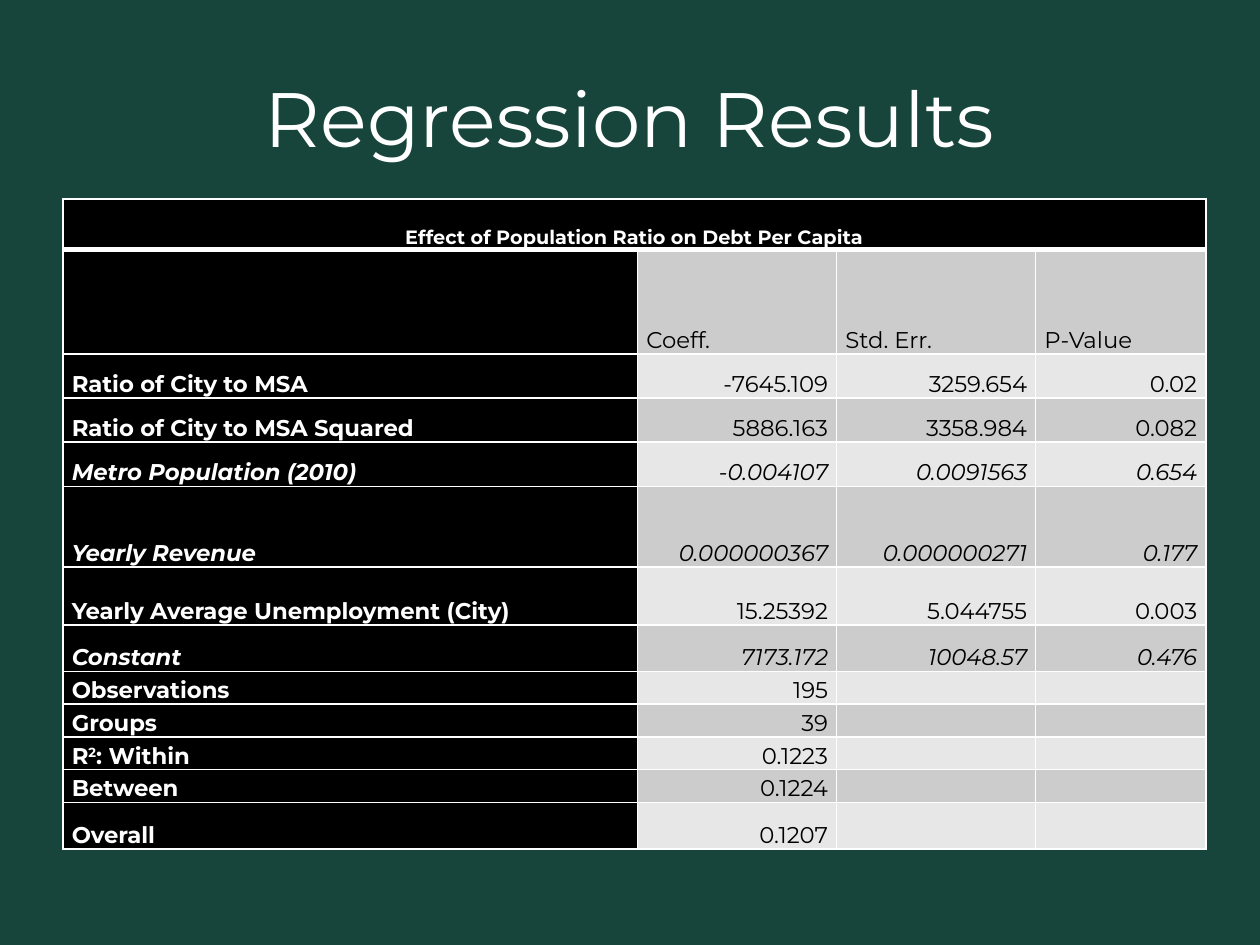
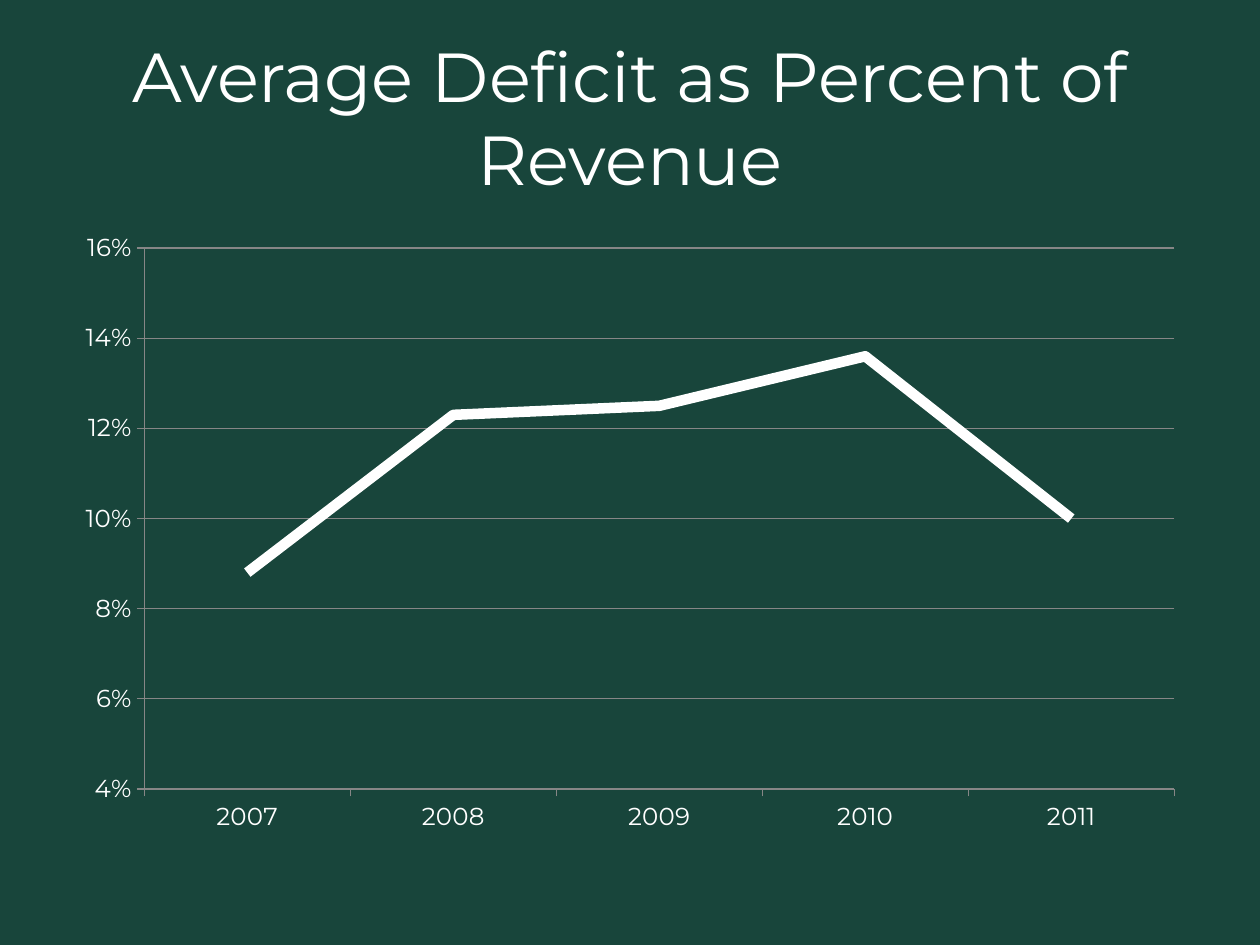
from lxml.etree import SubElement
from pptx import Presentation
from pptx.chart.data import CategoryChartData
from pptx.dml.color import RGBColor
from pptx.enum.chart import XL_CHART_TYPE as ChartType, XL_MARKER_STYLE as Marker
from pptx.enum.chart import XL_TICK_MARK as TickMark
from pptx.enum.text import MSO_ANCHOR as Anchor, MSO_AUTO_SIZE as AutoSize, PP_ALIGN as Align
from pptx.oxml import parse_xml
from pptx.oxml.ns import nsdecls, qn
from pptx.util import Inches, Pt

FONT = "Montserrat"
GREEN, WHITE, BLACK = "18453B", "FFFFFF", "000000"
BANDS = ["E7E7E7", "CCCCCC"]
AXIS_GREY = "868686"
TITLE_ONLY = 5

COLUMN_WIDTHS = [4.56, 1.58, 1.58, 1.35]
TABLE_TITLE = "Effect of Population Ratio on Debt Per Capita"
HEADINGS = ["", "Coeff.", "Std. Err.", "P-Value"]
# Row height, italic, then label and values; ^ encloses a superscript
RESULTS = [
    (0.35, False, ["Ratio of City to MSA", "-7645.109", "3259.654", "0.02"]),
    (0.35, False, ["Ratio of City to MSA Squared", "5886.163", "3358.984", "0.082"]),
    (0.35, True, ["Metro Population (2010)", "-0.004107", "0.0091563", "0.654"]),
    (0.64, True, ["Yearly Revenue", "0.000000367", "0.000000271", "0.177"]),
    (0.46, False, ["Yearly Average Unemployment (City)", "15.25392", "5.044755", "0.003"]),
    (0.37, True, ["Constant", "7173.172", "10048.57", "0.476"]),
    (0.26, False, ["Observations", "195", "", ""]),
    (0.26, False, ["Groups", "39", "", ""]),
    (0.26, False, ["R^2^: Within", "0.1223", "", ""]),
    (0.26, False, ["Between", "0.1224", "", ""]),
    (0.37, False, ["Overall", "0.1207", "", ""]),
]
DEFICITS = {"2007": 0.088, "2008": 0.123, "2009": 0.125, "2010": 0.136, "2011": 0.1}


def colour(hex_string):
    return RGBColor.from_string(hex_string)


def style_font(font, size, color, bold=False, italic=False):
    font.name, font.size = FONT, Pt(size)
    font.bold, font.italic = bold, italic
    font.color.rgb = colour(color)


def write_text(frame, text, size=13, color=BLACK, bold=False, italic=False,
               align=Align.LEFT, spacing=None):
    paragraph = frame.paragraphs[0]
    paragraph.alignment = align
    paragraph.line_spacing = spacing
    if not text:
        # Keeps an empty cell from stretching its row
        SubElement(paragraph._p, qn("a:endParaRPr"), sz=str(size * 100))
        return
    for index, part in enumerate(text.split("^")):
        run = paragraph.add_run()
        run.text = part
        style_font(run.font, size, color, bold, italic)
        if index % 2:
            run._r.get_or_add_rPr().set("baseline", "30000")


def add_title_slide(presentation, title, size):
    slide = presentation.slides.add_slide(presentation.slide_layouts[TITLE_ONLY])
    slide.background.fill.solid()
    slide.background.fill.fore_color.rgb = colour(GREEN)
    shape = slide.shapes.title
    shape.left, shape.top = Inches(0.5), Inches(0.3)
    shape.width, shape.height = Inches(9), Inches(1.25)
    frame = shape.text_frame
    frame.word_wrap, frame.auto_size = True, AutoSize.NONE
    frame.vertical_anchor = Anchor.MIDDLE
    write_text(frame, title, size=size, color=WHITE, align=Align.CENTER)
    return slide


def set_borders(cell, **widths):
    properties = cell._tc.get_or_add_tcPr()
    for index, side in enumerate("LRTB"):
        width = Pt(widths.get(side, 1))
        properties.insert(index, parse_xml(
            f'<a:ln{side} {nsdecls("a")} w="{width}"><a:solidFill>'
            f'<a:srgbClr val="{WHITE}"/></a:solidFill></a:ln{side}>'))


def fill_cell(cell, text, fill, borders, **text_format):
    cell.fill.solid()
    cell.fill.fore_color.rgb = colour(fill)
    cell.vertical_anchor = Anchor.BOTTOM
    cell.margin_left = cell.margin_right = Inches(0.07)
    cell.margin_top = cell.margin_bottom = 0
    write_text(cell.text_frame, text, spacing=1.15, **text_format)
    set_borders(cell, **borders)


def add_results_table(slide, left, top, width, height):
    heights = [0.4, 0.83] + [row_height for row_height, _, _ in RESULTS]
    table = slide.shapes.add_table(
        len(heights), len(COLUMN_WIDTHS), Inches(left), Inches(top),
        Inches(width), Inches(height)).table
    table.first_row = table.horz_banding = False
    for column, column_width in zip(table.columns, COLUMN_WIDTHS):
        column.width = Inches(column_width)
    for row, row_height in zip(table.rows, heights):
        row.height = Inches(row_height)

    # Heading across all columns
    table.cell(0, 0).merge(table.cell(0, len(COLUMN_WIDTHS) - 1))
    for column in range(len(COLUMN_WIDTHS)):
        fill_cell(table.cell(0, column), "" if column else TABLE_TITLE, BLACK,
                  {"B": 3}, size=11, color=WHITE, bold=True, align=Align.CENTER)

    # Column headings and results, in alternating bands
    body = [(False, HEADINGS)] + [(italic, texts) for _, italic, texts in RESULTS]
    for row, (italic, texts) in enumerate(body, start=1):
        borders = {"T": 3} if row == 1 else {}
        for column, text in enumerate(texts):
            is_label = column == 0
            fill_cell(table.cell(row, column), text,
                      BLACK if is_label else BANDS[row % 2], borders,
                      color=WHITE if is_label else BLACK, bold=is_label, italic=italic,
                      align=Align.LEFT if is_label or row == 1 else Align.RIGHT)


def style_line(line, color, width):
    line.color.rgb = colour(color)
    line.width = Pt(width)


def add_deficit_chart(slide, left, top, width, height):
    data = CategoryChartData(number_format="0%")
    data.categories = list(DEFICITS)
    data.add_series("Series 1", list(DEFICITS.values()))
    chart = slide.shapes.add_chart(
        ChartType.LINE, Inches(left), Inches(top), Inches(width), Inches(height), data).chart
    chart.has_legend = chart.has_title = False
    style_font(chart.font, 10, BLACK)
    plot = chart.plots[0]
    plot.vary_by_categories = False

    # Deficit line
    series = plot.series[0]
    series.smooth = False
    series.marker.style = Marker.NONE
    style_line(series.format.line, WHITE, 6)

    # Axes and gridlines
    for axis in (chart.category_axis, chart.value_axis):
        style_font(axis.tick_labels.font, 14, WHITE)
        axis.major_tick_mark = TickMark.OUTSIDE
        axis.minor_tick_mark = TickMark.NONE
        style_line(axis.format.line, AXIS_GREY, 0.75)
    values = chart.value_axis
    values.minimum_scale, values.maximum_scale, values.major_unit = 0.04, 0.16, 0.02
    values.tick_labels.number_format = "0%"
    values.tick_labels.number_format_is_linked = False
    values.has_major_gridlines = True
    style_line(values.major_gridlines.format.line, AXIS_GREY, 0.75)


def main():
    presentation = Presentation()
    presentation.slide_width, presentation.slide_height = Inches(10), Inches(7.5)
    regression = add_title_slide(presentation, "Regression Results", 44)
    add_results_table(regression, 0.5, 1.58, 9.08, 5.17)
    deficit = add_title_slide(presentation, "Average Deficit as Percent of Revenue", 39.6)
    add_deficit_chart(deficit, 0.5, 1.75, 9, 4.95)
    presentation.save("out.pptx")


if __name__ == "__main__":
    main()
